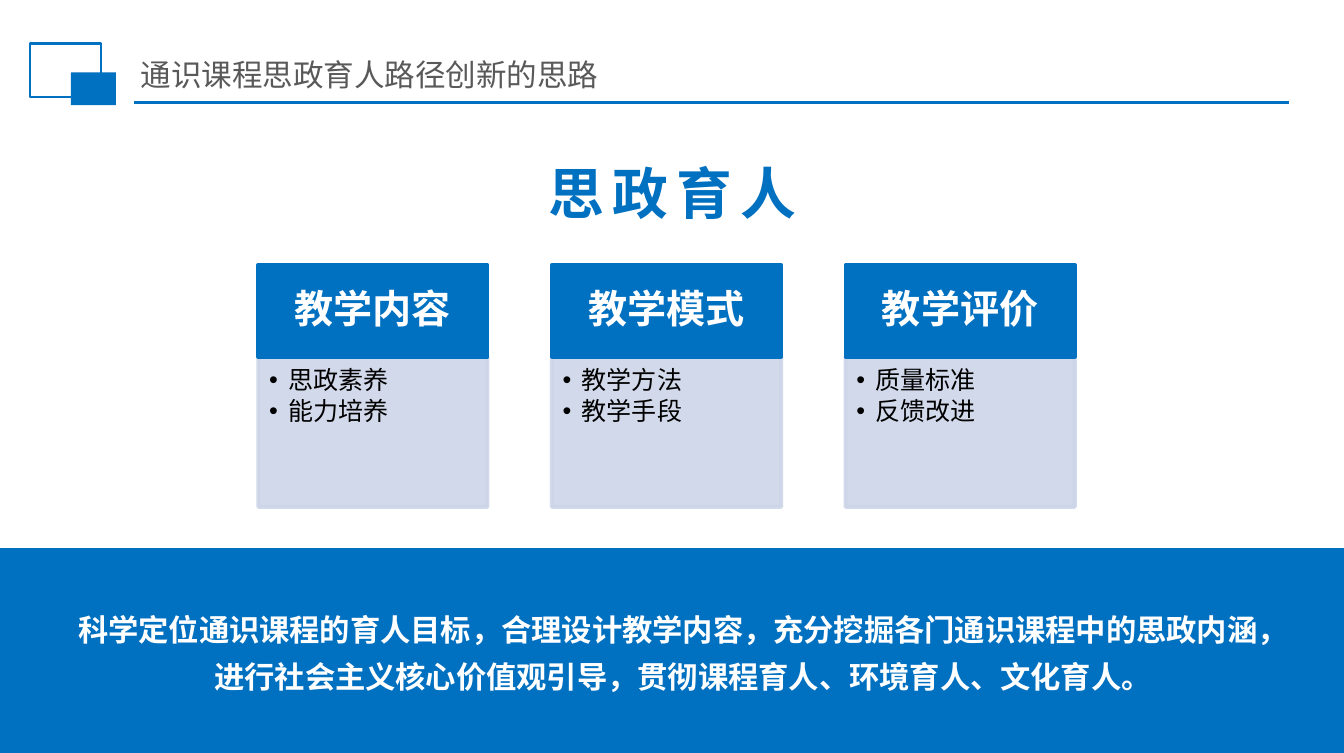
from dataclasses import dataclass
from lxml import etree
from pptx import Presentation
from pptx.dml.color import RGBColor
from pptx.enum.shapes import MSO_CONNECTOR, MSO_SHAPE
from pptx.enum.text import MSO_ANCHOR, MSO_AUTO_SIZE, PP_ALIGN
from pptx.oxml.ns import qn
from pptx.util import Emu, Pt

RECT = MSO_SHAPE.RECTANGLE
LINE = MSO_CONNECTOR.STRAIGHT
TOP, MID = MSO_ANCHOR.TOP, MSO_ANCHOR.MIDDLE
LEFT, CENTER = PP_ALIGN.LEFT, PP_ALIGN.CENTER
FIXED = MSO_AUTO_SIZE.NONE
SCALE = 9144  # 100 px to the inch


@dataclass(frozen=True)
class Theme:
    blue: str = "0070C0"
    pale: str = "CCD5E8"
    gray: str = "595959"
    white: str = "FFFFFF"
    black: str = "000000"
    sans: str = "Arial"
    cjk: str = "Noto Sans CJK SC"
    title: float = 16.1
    hero: float = 29.4
    head: float = 20.6
    item: float = 13.2
    note: float = 16


THEME = Theme()

CARDS = [
    ("教学内容", ["思政素养", "能力培养"]),
    ("教学模式", ["教学方法", "教学手段"]),
    ("教学评价", ["质量标准", "反馈改进"]),
]
NOTE = [
    "科学定位通识课程的育人目标，合理设计教学内容，充分挖掘各门通识课程中的思政内涵，",
    "进行社会主义核心价值观引导，贯彻课程育人、环境育人、文化育人。",
]


def px(n):
    return Emu(n * SCALE)


def put(obj, values):
    for key, value in values.items():
        setattr(obj, key, value)


def place(shape, box):
    put(shape, dict(zip(("left", "top", "width", "height"), map(px, box))))


def paint(shape, fill=None, line=None, width=1, alpha=None):
    """Set fill and outline; alpha is a percentage for both."""
    for part, color in ((shape.fill, fill), (shape.line.fill, line)):
        if color is None:
            part.background()
            continue
        part.solid()
        part.fore_color.rgb = RGBColor.from_string(color)
    if line:
        shape.line.width = Pt(width)
    if alpha:
        for color in shape.element.spPr.iter(qn("a:srgbClr")):
            etree.SubElement(color, qn("a:alpha"), val=str(alpha * 1000))


def rect(slide, box, **look):
    shape = slide.shapes.add_shape(RECT, *map(px, box))
    shape.shadow.inherit = False
    paint(shape, **look)
    return shape


def write(shape, lines, size, color, bold=False, font=THEME.sans, anchor=TOP,
          inset=(7, 4, 7, 4), align=CENTER, space=1.0, after=0, dot=False, gap=0):
    """Fill a shape with paragraphs of one style."""
    frame = shape.text_frame
    put(frame, {"word_wrap": True, "auto_size": FIXED, "vertical_anchor": anchor})
    sides = ("margin_left", "margin_top", "margin_right", "margin_bottom")
    put(frame, dict(zip(sides, map(px, inset))))
    frame.text = "\n".join(lines)
    for para in frame.paragraphs:
        props = para._p.get_or_add_pPr()
        put(para, {"alignment": align, "line_spacing": space,
                   "space_before": Pt(0), "space_after": Pt(after)})
        if dot:
            props.set("marL", str(px(14)))
            props.set("indent", str(px(-14)))
            etree.SubElement(props, qn("a:buFont"), typeface=THEME.sans)
            etree.SubElement(props, qn("a:buChar"), char="•")
        for run in para.runs:
            put(run.font, {"name": font, "size": Pt(size), "bold": bold})
            run.font.color.rgb = RGBColor.from_string(color)
            style = run.font._element
            etree.SubElement(style, qn("a:ea"), typeface=font)
            if gap:
                style.set("spc", str(gap))


def banner(slide, box):
    """Corner mark, page title and rule."""
    x, y, w, h = box
    rect(slide, (x, y, 52, 39), line=THEME.blue, width=1.5)
    rect(slide, (x + 30, y + 21, 33, 24), fill=THEME.blue)
    rule = slide.shapes.add_connector(
        LINE, px(x + 76), px(y + h), px(x + w), px(y + h))
    rule.line.color.rgb = RGBColor.from_string(THEME.blue)
    rule.line.width = Pt(1.25)
    etree.SubElement(rule.element.spPr, qn("a:effectLst"))
    title = slide.shapes.title
    place(title, (x + 74, y + 5, 635, 35))
    write(title, ["通识课程思政育人路径创新的思路"], THEME.title, THEME.gray,
          font=THEME.cjk, anchor=MID, align=LEFT)


def hero(slide, box):
    """Large heading above the cards."""
    text = slide.shapes.add_textbox(*map(px, box))
    write(text, ["思政育人"], THEME.hero, THEME.blue, bold=True,
          inset=(10, 5, 10, 5), gap=440)


def card(slide, box, head, items, body):
    """Blue heading over a pale list."""
    x, y, w, h = box
    top = 67
    label = rect(slide, (x, y, w, top), fill=THEME.blue, line=THEME.blue, width=2)
    write(label, [head], THEME.head, THEME.white, bold=True, anchor=MID,
          inset=(16, 9, 16, 9), space=0.9)
    place(body, (x, y + top, w, h - top))
    paint(body, fill=THEME.pale, line=THEME.pale, width=2, alpha=90)
    write(body, items, THEME.item, THEME.black, inset=(8, 8, 10, 12),
          align=LEFT, space=0.9, after=2, dot=True)


def cards(slide, box):
    """Equal cards across the box, one list placeholder each."""
    x, y, w, h = box
    wide = 168
    step = (w - wide) // (len(CARDS) - 1)
    bodies = [p for p in slide.placeholders if p.placeholder_format.idx]
    for i, (head, items) in enumerate(CARDS):
        card(slide, (x + i * step, y, wide, h), head, items, bodies[i])
    for spare in bodies[len(CARDS):]:
        spare.element.getparent().remove(spare.element)


def footer(slide, box):
    """Full-width band with the closing statement."""
    x, y, w, h = box
    rect(slide, box, fill=THEME.blue, line=THEME.blue, width=3)
    text = slide.shapes.add_textbox(px(x + 28), px(y + 31), px(w - 39), px(77))
    write(text, NOTE, THEME.note, THEME.white, bold=True,
          inset=(10, 5, 10, 5), space=1.3)


def main():
    deck = Presentation()
    put(deck, {"slide_width": px(984), "slide_height": px(551)})
    slide = deck.slides.add_slide(deck.slide_layouts.get_by_name("Comparison"))
    banner(slide, (22, 32, 922, 43))
    hero(slide, (355, 111, 275, 60))
    cards(slide, (189, 194, 598, 177))
    footer(slide, (0, 403, 984, 148))
    deck.save("out.pptx")


if __name__ == "__main__":
    main()
